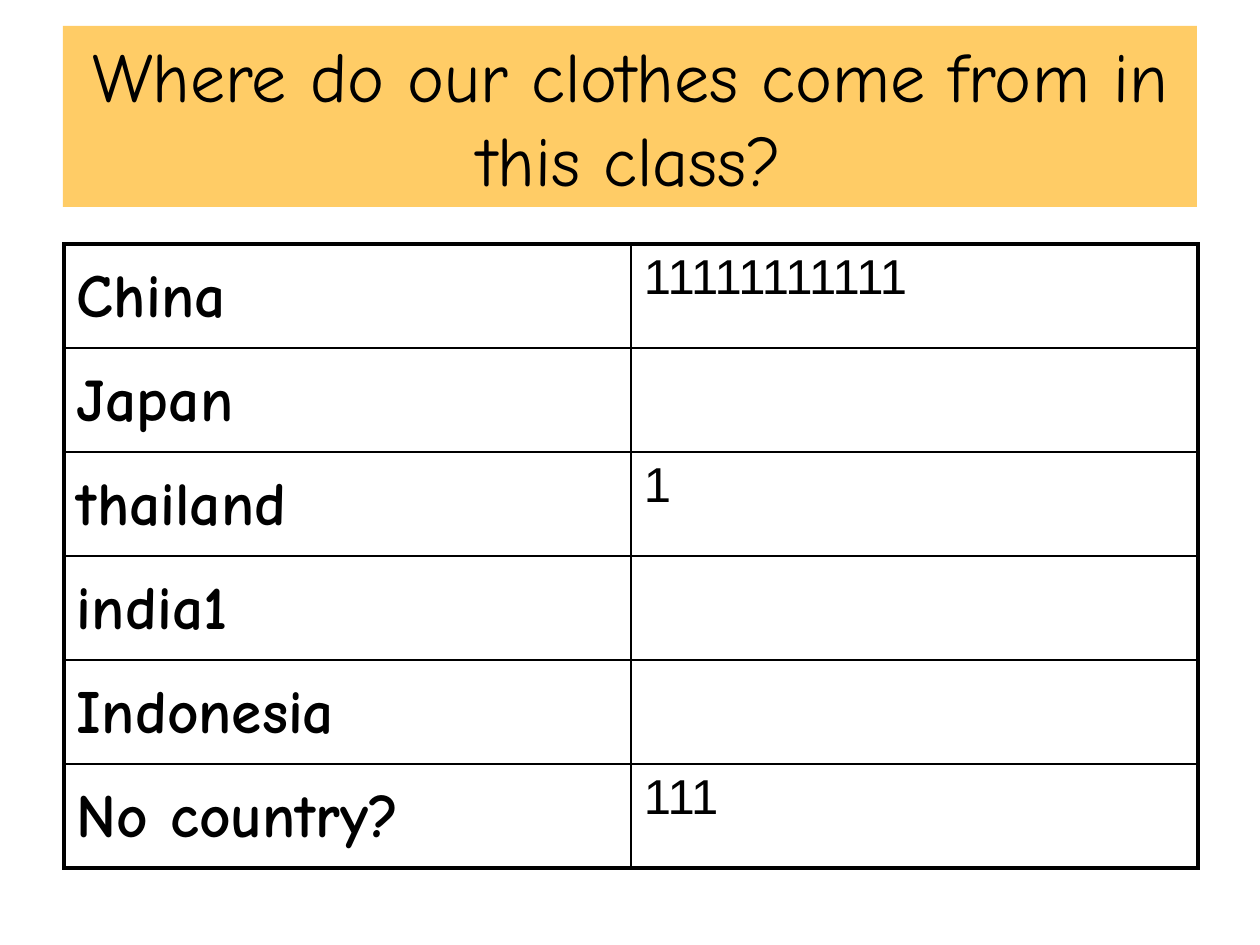
from dataclasses import dataclass

from lxml.etree import SubElement
from pptx import Presentation
from pptx.dml.color import RGBColor
from pptx.enum.shapes import MSO_SHAPE
from pptx.enum.text import MSO_ANCHOR, PP_ALIGN
from pptx.oxml.ns import qn
from pptx.slide import Slide
from pptx.table import _Cell
from pptx.text.text import TextFrame
from pptx.util import Emu, Pt

PX_PER_INCH = 126
BLACK = RGBColor(0x00, 0x00, 0x00)
AMBER = RGBColor(0xFF, 0xCC, 0x66)
HEADING_FONT = "Comic Neue"
TALLY_FONT = "Arial"
OUTER_LINE = 2.25
INNER_LINE = 1
ROW_HEIGHT = 104
COLUMN_WIDTH = 567


@dataclass(frozen=True)
class Origin:
    country: str
    tally: str = ""


ORIGINS = [
    Origin("China", "11111111111"),
    Origin("Japan"),
    Origin("thailand", "1"),
    Origin("india1"),
    Origin("Indonesia"),
    Origin("No country?", "111"),
]


def px(length: int) -> Emu:
    return Emu(round(length * 914400 / PX_PER_INCH))


def write(frame: TextFrame, text: str, *, font: str, size: int, bold: bool = False,
          align: PP_ALIGN = PP_ALIGN.LEFT, spacing: float = 1.0) -> None:
    paragraph = frame.paragraphs[0]
    paragraph.alignment = align
    paragraph.line_spacing = spacing
    run = paragraph.add_run()
    run.text = text
    run.font.name = font
    run.font.size = Pt(size)
    run.font.bold = bold
    run.font.color.rgb = BLACK


def draw_border(cell: _Cell, side: str, width: float) -> None:
    line = SubElement(cell._tc.get_or_add_tcPr(), qn(f"a:{side}"), w=str(Pt(width)))
    fill = SubElement(line, qn("a:solidFill"))
    SubElement(fill, qn("a:srgbClr"), val=str(BLACK))


def style_cell(cell: _Cell, outer_sides: set[str], top_margin: int) -> None:
    for side in ("lnL", "lnR", "lnT", "lnB"):
        draw_border(cell, side, OUTER_LINE if side in outer_sides else INNER_LINE)
    cell.fill.background()
    cell.margin_left = cell.margin_right = px(13)
    cell.margin_top = px(top_margin)
    cell.margin_bottom = px(6)
    cell.vertical_anchor = MSO_ANCHOR.TOP


def draw_title(slide: Slide, text: str) -> None:
    banner = slide.shapes.add_shape(MSO_SHAPE.RECTANGLE, px(63), px(26), px(1134), px(181))
    banner.shadow.inherit = False
    banner.fill.solid()
    banner.fill.fore_color.rgb = AMBER
    banner.line.fill.background()
    banner.text_frame.word_wrap = True
    banner.text_frame.vertical_anchor = MSO_ANCHOR.MIDDLE
    write(banner.text_frame, text, font=HEADING_FONT, size=40, align=PP_ALIGN.CENTER)


def draw_tally_table(slide: Slide, origins: list[Origin]) -> None:
    table = slide.shapes.add_table(
        len(origins), 2, px(64), px(244), px(2 * COLUMN_WIDTH), px(len(origins) * ROW_HEIGHT)
    ).table
    table.first_row = False
    table.horz_banding = False
    for index, origin in enumerate(origins):
        table.rows[index].height = px(ROW_HEIGHT)
        edges = set()
        if index == 0:
            edges.add("lnT")
        if index == len(origins) - 1:
            edges.add("lnB")
        country, tally = table.cell(index, 0), table.cell(index, 1)
        style_cell(country, edges | {"lnL"}, top_margin=6)
        style_cell(tally, edges | {"lnR"}, top_margin=10)
        write(country.text_frame, origin.country, font=HEADING_FONT, size=35, bold=True,
              spacing=1.17)
        if origin.tally:
            write(tally.text_frame, origin.tally, font=TALLY_FONT, size=28, spacing=0.93)


def main() -> None:
    presentation = Presentation()
    presentation.slide_width = px(1260)
    presentation.slide_height = px(945)
    slide = presentation.slides.add_slide(presentation.slide_layouts[6])
    draw_title(slide, "Where do our clothes come from in this class?")
    draw_tally_table(slide, ORIGINS)
    presentation.save("out.pptx")


if __name__ == "__main__":
    main()
